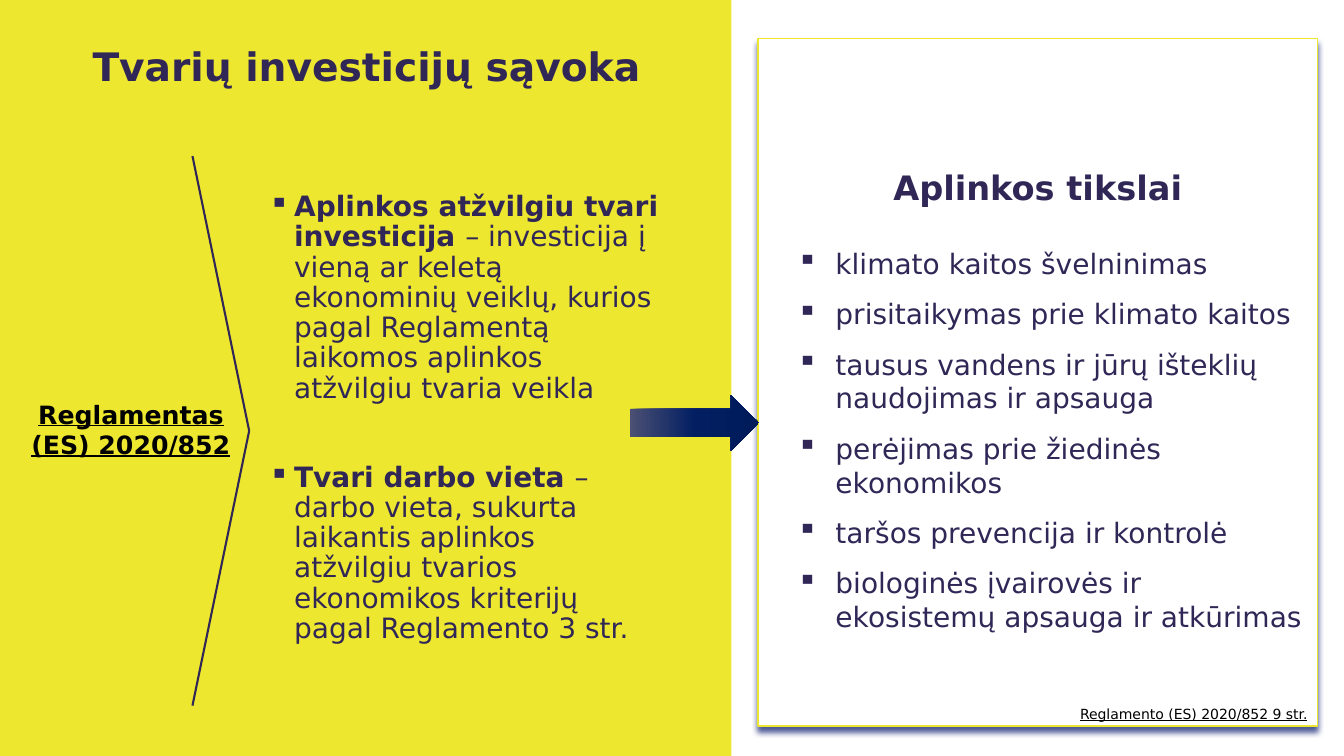
from copy import deepcopy

from lxml import etree
from pptx import Presentation
from pptx import util as u
from pptx.dml.color import RGBColor
from pptx.enum import shapes, text
from pptx.oxml import parse_xml
from pptx.oxml.ns import nsdecls, qn

Pt = u.Pt
FONT = "DejaVu Sans"
COLORS = {
    "yellow": "EEE730", "border": "EDE630", "white": "FFFFFF", "ink": "302757",
    "black": "000000", "shadow": "4D5996",
}
ARROW_STOPS = [(0, "4B5074"), (0.5, "031F62"), (1, "001B5A")]
DEFINITIONS = [
    ("Aplinkos atžvilgiu tvari investicija ",
     "– investicija į vieną ar keletą ekonominių veiklų, kurios pagal "
     "Reglamentą laikomos aplinkos atžvilgiu tvaria veikla"),
    ("Tvari darbo vieta ",
     "– darbo vieta, sukurta laikantis aplinkos atžvilgiu tvarios "
     "ekonomikos kriterijų pagal Reglamento 3 str."),
]
GOALS = [
    "klimato kaitos švelninimas",
    "prisitaikymas prie klimato kaitos",
    "tausus vandens ir jūrų išteklių naudojimas ir apsauga",
    "perėjimas prie žiedinės ekonomikos",
    "taršos prevencija ir kontrolė",
    "biologinės įvairovės ir ekosistemų apsauga ir atkūrimas",
]


def rgb(name):
    return RGBColor.from_string(COLORS[name])


def add_rect(s, x, y, w, h, fill):
    sp = s.shapes.add_shape(shapes.MSO_SHAPE.RECTANGLE, Pt(x), Pt(y), Pt(w), Pt(h))
    sp.shadow.inherit = False
    sp.fill.solid()
    sp.fill.fore_color.rgb = rgb(fill)
    sp.line.fill.background()
    return sp


def add_frame(s, x, y, w, h):
    tf = s.shapes.add_textbox(Pt(x), Pt(y), Pt(w), Pt(h)).text_frame
    tf.word_wrap = True
    return tf


def add_run(p, content, size, color="ink", bold=False, underline=False):
    r = p.add_run()
    r.text = content
    r.font.name = FONT
    r.font.size = Pt(size)
    r.font.bold = bold
    r.font.underline = underline
    r.font.color.rgb = rgb(color)


def add_line_text(s, box, content, size, align, **style):
    tf = add_frame(s, *box)
    p = tf.paragraphs[0]
    p.alignment = align
    add_run(p, content, size, **style)
    return tf


def add_bullet(tf, index, margin, indent):
    p = tf.add_paragraph() if index else tf.paragraphs[0]
    pPr = p._p.get_or_add_pPr()
    pPr.set("marL", str(Pt(margin)))
    pPr.set("indent", str(Pt(-indent)))
    etree.SubElement(pPr, qn("a:buChar")).set("char", "▪")
    return p


def draw_title(s, x, y, w, h):
    tf = add_line_text(s, (x, y, w, h), "Tvarių investicijų sąvoka", 28,
                       text.PP_ALIGN.LEFT, bold=True)
    tf.vertical_anchor = text.MSO_ANCHOR.MIDDLE


def draw_regulation(s, x, y, w, h):
    add_line_text(s, (x, y + h / 2 - 26, w - 6, 60), "Reglamentas (ES) 2020/852",
                  18, text.PP_ALIGN.CENTER, color="black", bold=True, underline=True)
    tip = x + w
    for end in (y, y + h):
        cn = s.shapes.add_connector(shapes.MSO_CONNECTOR.STRAIGHT,
                                    Pt(tip - 40.5), Pt(end), Pt(tip), Pt(y + h / 2))
        cn.line.color.rgb = rgb("ink")
        cn.line.width = Pt(1.5)
        etree.SubElement(cn._element.spPr, qn("a:effectLst"))


def draw_definitions(s, x, y, w, h):
    tf = add_frame(s, x, y, w, h)
    for i, (term, meaning) in enumerate(DEFINITIONS):
        p = add_bullet(tf, i, 18, 18)
        p.line_spacing = 0.9
        p.space_before = Pt(42 if i else 0)
        add_run(p, term, 20, bold=True)
        add_run(p, meaning, 20)


def draw_goals(s, x, y, w, h):
    sp = add_rect(s, x, y, w, h, "white")
    sp.line.color.rgb = rgb("border")
    sp.line.width = Pt(1)
    spPr = sp._element.spPr
    spPr.remove(spPr.find(qn("a:effectLst")))
    spPr.append(parse_xml(
        f'<a:effectLst {nsdecls("a")}><a:outerShdw blurRad="{Pt(4)}" dist="{Pt(4)}" '
        f'dir="5400000" algn="t" rotWithShape="0"><a:srgbClr val="{COLORS["shadow"]}"/>'
        '</a:outerShdw></a:effectLst>'))
    add_line_text(s, (x, y + 88, w, 36), "Aplinkos tikslai", 24,
                  text.PP_ALIGN.CENTER, bold=True)
    tf = add_frame(s, x, y + 145, w, 300)
    for i, goal in enumerate(GOALS):
        p = add_bullet(tf, i, 48.2, 27.4)
        p.space_before = Pt(6 if i else 0)
        p.space_after = Pt(6)
        add_run(p, goal, 20)
    add_line_text(s, (x, y + h - 18, w, 20), "Reglamento (ES) 2020/852 9 str.", 10,
                  text.PP_ALIGN.RIGHT, color="black", underline=True)


def draw_arrow(s, x, y, w, h):
    sp = s.shapes.add_shape(shapes.MSO_SHAPE.RIGHT_ARROW, Pt(x), Pt(y), Pt(w), Pt(h))
    sp.shadow.inherit = False
    sp.line.fill.background()
    sp.fill.gradient()
    sp.fill.gradient_angle = 0
    gs_list = sp._element.spPr.find(".//" + qn("a:gsLst"))
    gs_list.append(deepcopy(gs_list[-1]))
    for stop, (position, color) in zip(sp.fill.gradient_stops, ARROW_STOPS):
        stop.position = position
        stop.color.rgb = RGBColor.from_string(color)


def main():
    prs = Presentation()
    prs.slide_width, prs.slide_height = Pt(960), Pt(540)
    s = prs.slides.add_slide(prs.slide_layouts[6])
    add_rect(s, 0, 0, 522.5, 540, "yellow")
    draw_goals(s, 541.5, 27.5, 399.5, 491)
    draw_arrow(s, 450, 282, 92, 40)
    draw_title(s, 59, 4.5, 467, 85)
    draw_regulation(s, 15, 111.5, 163, 392.5)
    draw_definitions(s, 185, 134, 294.5, 381)
    prs.save("out.pptx")


if __name__ == "__main__":
    main()
